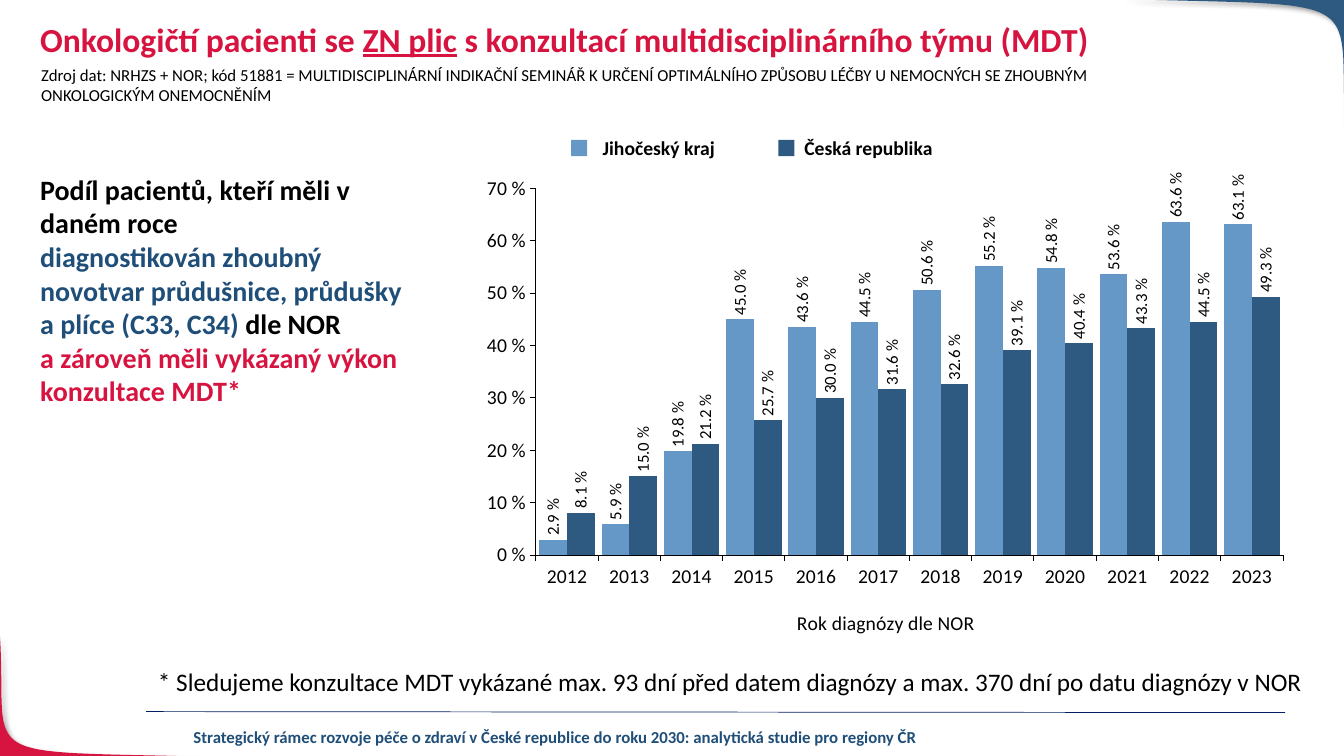
from lxml.etree import SubElement
from pptx import Presentation
from pptx.chart.data import CategoryChartData
from pptx.dml.color import RGBColor
from pptx.enum.chart import XL_CHART_TYPE, XL_LABEL_POSITION, XL_TICK_MARK
from pptx.enum.shapes import MSO_CONNECTOR, MSO_SHAPE
from pptx.enum.text import MSO_ANCHOR, PP_ALIGN
from pptx.oxml.ns import qn
from pptx.util import Pt

RED, BLUE, SKY = "D71440", "2E5980", "6598C7"
NAVY, BLACK = "1F4E79", "000000"
FACE = "Calibri"


def hue(code):
    """Turn a hex string into a colour."""
    return RGBColor.from_string(code)


def place(part, index, **sizes):
    """Give a chart part a fixed layout, in fractions of the chart."""
    for old in part.findall(qn("c:layout")):
        part.remove(old)
    layout = part.makeelement(qn("c:layout"))
    part.insert(index, layout)
    manual = SubElement(layout, qn("c:manualLayout"))
    if "w" in sizes:
        SubElement(manual, qn("c:layoutTarget"), val="inner")
    for mode in ("xMode", "yMode"):
        SubElement(manual, qn("c:" + mode), val="edge")
    for key, value in sizes.items():
        SubElement(manual, qn("c:" + key), val=str(value))


deck = Presentation()
deck.slide_width, deck.slide_height = Pt(960), Pt(540)
slide = deck.slides.add_slide(deck.slide_layouts[6])
shapes = slide.shapes

# Corner swooshes: four curve points, then the corner itself
corners = [
    (RED, [(153.4, 540.7), (-24.5, 535.7), (5.8, 546.5), (0, 453.6)], (-0.7, 540.7)),
    (BLUE, [(799.9, -0.7), (986.4, 5), (954.7, -7.2), (961.2, 102.2)], (961.2, -0.7)),
]
STEPS = 40
for color, curve, tip in corners:
    dots = []
    for step in range(STEPS + 1):
        t = step / STEPS
        parts = ((1 - t) ** 3, 3 * t * (1 - t) ** 2, 3 * t * t * (1 - t), t ** 3)
        dots.append([Pt(sum(w * p[axis] for w, p in zip(parts, curve))) for axis in (0, 1)])
    dots.append([Pt(n) for n in tip])
    pen = shapes.build_freeform(*dots[0])
    pen.add_line_segments(dots[1:], close=True)
    corner = pen.convert_to_shape()
    corner.fill.solid()
    corner.fill.fore_color.rgb = hue(color)
    corner.line.fill.background()
    corner.shadow.inherit = False
    effects = corner.element.spPr.find(qn("a:effectLst"))
    shadow = SubElement(effects, qn("a:outerShdw"), blurRad=str(Pt(4)), dist=str(Pt(3)),
                        dir="2700000", algn="tl", rotWithShape="0")
    black = SubElement(shadow, qn("a:srgbClr"), val=BLACK)
    SubElement(black, qn("a:alpha"), val="40000")

# Footer rule
rule = shapes.add_connector(MSO_CONNECTOR.STRAIGHT, Pt(104.4), Pt(508.3), Pt(918), Pt(509))
rule.line.color.rgb = hue("002060")
rule.line.width = Pt(0.5)
SubElement(rule.element.spPr, qn("a:effectLst"))

# Chart
data = CategoryChartData(number_format="0.0\\ %")
data.categories = [str(year) for year in range(2012, 2024)]
data.add_series("Jihočeský kraj", [0.029, 0.059, 0.198, 0.45, 0.436, 0.445,
                                   0.506, 0.552, 0.548, 0.536, 0.636, 0.631])
data.add_series("Česká republika", [0.081, 0.15, 0.212, 0.257, 0.3, 0.316,
                                    0.326, 0.391, 0.404, 0.433, 0.445, 0.493])
chart = shapes.add_chart(XL_CHART_TYPE.COLUMN_CLUSTERED, Pt(319), Pt(95.8),
                         Pt(619.2), Pt(362.2), data).chart
chart.has_legend = False
chart.has_title = False
chart.font.name, chart.font.size = FACE, Pt(14)
chart.font.color.rgb = hue(BLACK)
place(chart.element.find(".//" + qn("c:plotArea")), 0, x=0.103, y=0.107, w=0.862, h=0.724)

for axis in (chart.category_axis, chart.value_axis):
    axis.has_major_gridlines = False
    axis.major_tick_mark = XL_TICK_MARK.OUTSIDE
    axis.minor_tick_mark = XL_TICK_MARK.NONE
    axis.format.line.color.rgb = hue(BLACK)
    axis.format.line.width = Pt(0.75)
scale = chart.value_axis
scale.minimum_scale, scale.maximum_scale, scale.major_unit = 0, 0.7, 0.1
scale.tick_labels.number_format = "0\\ %"
scale.tick_labels.number_format_is_linked = False

title = chart.category_axis.axis_title
title.text_frame.text = "Rok diagnózy dle NOR"
font = title.text_frame.paragraphs[0].runs[0].font
font.name, font.size, font.bold = FACE, Pt(14), False
font.color.rgb = hue(BLACK)
place(title.element, 1, x=0.4, y=0.93)

plot = chart.plots[0]
plot.gap_width, plot.overlap = 25, 0
plot.vary_by_categories = False
for series, color in zip(plot.series, (SKY, BLUE)):
    series.format.fill.solid()
    series.format.fill.fore_color.rgb = hue(color)
    labels = series.data_labels
    labels.show_value = True
    labels.position = XL_LABEL_POSITION.OUTSIDE_END
    labels.number_format = "0.0\\ %"
    labels.number_format_is_linked = False
    labels.font.name, labels.font.size = FACE, Pt(12)
    labels.font.color.rgb = hue(BLACK)
for body in plot._element.iter(qn("a:bodyPr")):
    body.set("rot", "-5400000")
    body.set("vert", "horz")

# Text boxes: place, size, bold, then runs of text and colour
texts = {
    "footer": ((72.7, 515.5, 648, 21.6), 12, True, [
        ("Strategický rámec rozvoje péče o zdraví v České republice do roku 2030: "
         "analytická studie pro regiony ČR", NAVY)]),
    "title": ((21.6, 13, 828, 42.5), 24, True, [
        ("Onkologičtí pacienti se ", RED), ("ZN plic", RED),
        (" s konzultací multidisciplinárního týmu (MDT)", RED)]),
    "source": ((22.3, 42.5, 820.8, 36), 12, False, [
        ("Zdroj dat: NRHZS + NOR; kód 51881 = MULTIDISCIPLINÁRNÍ INDIKAČNÍ SEMINÁŘ "
         "K URČENÍ OPTIMÁLNÍHO ZPŮSOBU LÉČBY U NEMOCNÝCH SE ZHOUBNÝM "
         "ONKOLOGICKÝM ONEMOCNĚNÍM", BLACK)]),
    "claim": ((21.6, 119.5, 278, 177), 20, True, [
        ("Podíl pacientů, kteří měli v daném roce \v", BLACK),
        ("diagnostikován zhoubný novotvar průdušnice, průdušky a plíce (C33, C34) ", NAVY),
        ("dle NOR \v", BLACK),
        ("a zároveň měli vykázaný výkon konzultace MDT*", RED)]),
    "note": ((105.8, 472.3, 839.5, 28.8), 18, False, [
        ("* Sledujeme konzultace MDT vykázané max. 93 dní před datem diagnózy "
         "a max. 370 dní po datu diagnózy v NOR", BLACK)]),
    "legend": ((430.5, 96.5, 303.8, 17.3), 14, True, [
        ("Jihočeský kraj\tČeská republika", BLACK)]),
}
frames = {}
for name, (spot, size, bold, pieces) in texts.items():
    frame = shapes.add_textbox(*map(Pt, spot)).text_frame
    frame.word_wrap = True
    frames[name] = frame
    para = frame.paragraphs[0]
    for words, color in pieces:
        run = para.add_run()
        run.text = words.rstrip("\v")
        run.font.name, run.font.size, run.font.bold = FACE, Pt(size), bold
        run.font.color.rgb = hue(color)
        if words.endswith("\v"):
            para.add_line_break()

frames["footer"].paragraphs[0].alignment = PP_ALIGN.CENTER
head = frames["title"].paragraphs[0]
head.line_spacing = 0.9
head.runs[1].font.underline = True

# Legend: tab stop and colour keys
legend = frames["legend"]
legend.vertical_anchor = MSO_ANCHOR.MIDDLE
legend.margin_left = legend.margin_right = legend.margin_top = legend.margin_bottom = 0
props = legend.paragraphs[0]._p.get_or_add_pPr()
SubElement(SubElement(props, qn("a:tabLst")), qn("a:tab"), pos=str(Pt(144)), algn="l")
for left, color in ((408, SKY), (556, BLUE)):
    key = shapes.add_shape(MSO_SHAPE.RECTANGLE, Pt(left), Pt(100), Pt(11.5), Pt(11.5))
    key.fill.solid()
    key.fill.fore_color.rgb = hue(color)
    key.line.fill.background()
    key.shadow.inherit = False

deck.save("out.pptx")
